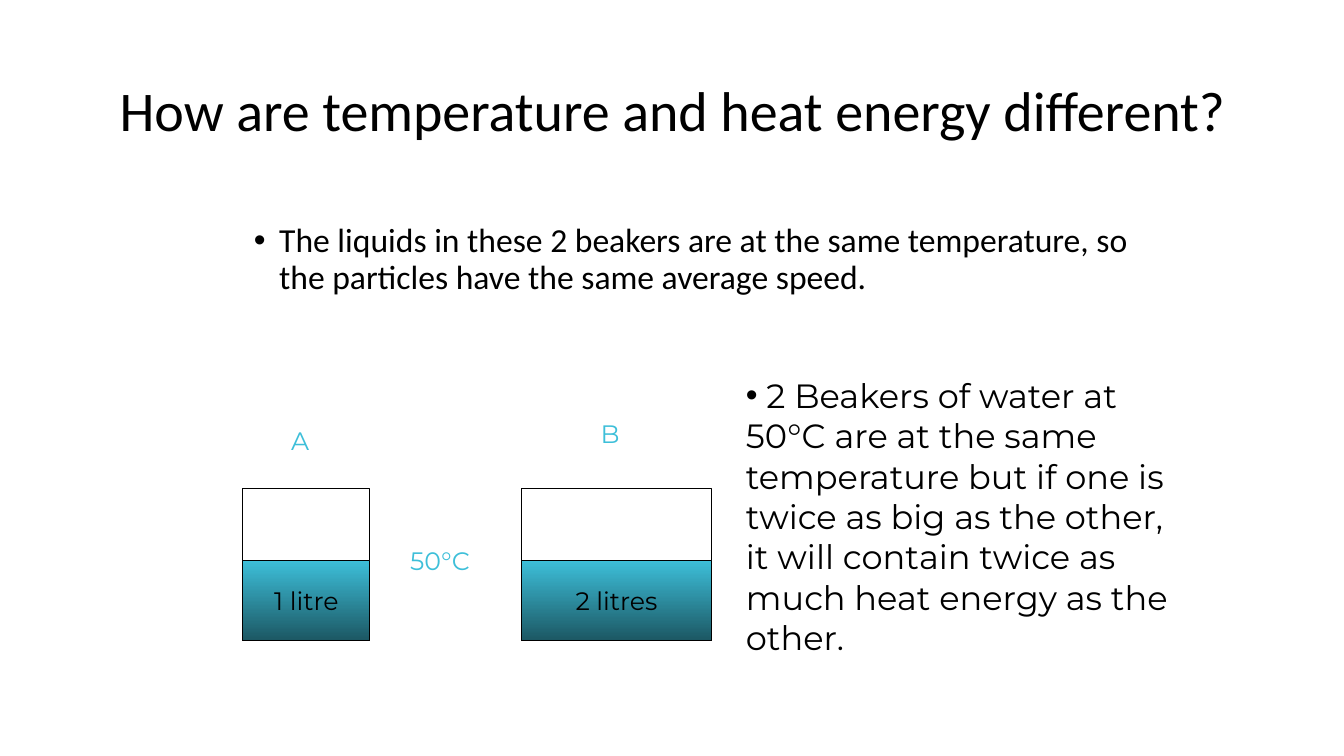
from lxml.etree import SubElement
from pptx import Presentation
from pptx.dml.color import RGBColor
from pptx.enum.shapes import MSO_SHAPE
from pptx.enum.text import MSO_ANCHOR, PP_ALIGN
from pptx.oxml.ns import qn
from pptx.util import Pt

PX = 9144
BLACK, AQUA, TEAL = "000000", "3DBFD9", "1C5864"
HEAD, BODY = "Calibri", "Montserrat"


def px(*sizes):
    """Turn px lengths into EMU."""
    return [size * PX for size in sizes]


def color(code):
    """Return the colour of a hex string."""
    return RGBColor.from_string(code)


def write(shape, text, font, size, ink=BLACK, align=PP_ALIGN.LEFT, wrap=True, middle=False):
    """Fill a shape with one paragraph and return it."""
    frame = shape.text_frame
    frame.word_wrap = wrap
    frame.vertical_anchor = MSO_ANCHOR.MIDDLE if middle else MSO_ANCHOR.TOP
    para = frame.paragraphs[0]
    para.alignment = align
    run = para.add_run()
    run.text = text
    run.font.name = font
    run.font.size = Pt(size)
    run.font.color.rgb = color(ink)
    return para


def bullet(para, hang=0):
    """Give a paragraph a round bullet and a hanging indent in px."""
    props = para._p.get_or_add_pPr()
    props.set("marL", str(hang * PX))
    props.set("indent", str(-hang * PX))
    SubElement(props, qn("a:buFont"), typeface="Arial")
    SubElement(props, qn("a:buChar"), char="•")


def label(slide, box, text):
    """Place a short aqua label."""
    write(slide.shapes.add_textbox(*px(*box)), text, BODY, 18, AQUA, wrap=False)


def block(slide, box):
    """Place an unfilled box with a thin black outline."""
    shape = slide.shapes.add_shape(MSO_SHAPE.RECTANGLE, *px(*box))
    shape.shadow.inherit = False
    shape.fill.background()
    shape.line.color.rgb = color(BLACK)
    shape.line.width = Pt(0.75)
    return shape


def beaker(slide, box, name, rise, volume):
    """Draw a beaker with its water, volume and name above."""
    left, top, width, height = box
    depth = 79
    block(slide, box)
    water = block(slide, (left, top + height - depth, width, depth))
    water.fill.gradient()
    water.fill.gradient_angle = 270
    for stop, code, place in zip(water.fill.gradient_stops, (AQUA, TEAL), (0, 1)):
        stop.color.rgb = color(code)
        stop.position = place
    write(water, volume, BODY, 18, align=PP_ALIGN.CENTER, wrap=False, middle=True)
    label(slide, (left + width // 2 - 25, top - rise, 40, 40), name)


def title(slide, box):
    """Place the centred title."""
    para = write(slide.shapes.add_textbox(*px(*box)),
                 "How are temperature and heat energy different?",
                 HEAD, 40, align=PP_ALIGN.CENTER, middle=True)
    para.line_spacing = 0.9


def intro(slide, box):
    """Place the opening bullet."""
    para = write(slide.shapes.add_textbox(*px(*box)),
                 "The liquids in these 2 beakers are at the same temperature, "
                 "so the particles have the same average speed.", HEAD, 24)
    para.line_spacing = 0.9
    para.space_before = Pt(10)
    bullet(para, 25)


def lesson(slide, box):
    """Place the closing bullet beside the beakers."""
    para = write(slide.shapes.add_textbox(*px(*box)),
                 " 2 Beakers of water at 50°C are at the same temperature but if one is "
                 "twice as big as the other, it will contain twice as much heat energy "
                 "as the other.", BODY, 24)
    bullet(para)


def diagram(slide, box):
    """Draw both beakers and their shared temperature."""
    left, top, width, height = box
    small, large = 126, 189
    beaker(slide, (left, top, small, height), "A", 68, "1 litre")
    beaker(slide, (left + width - large, top, large, height), "B", 75, "2 litres")
    label(slide, (left + small + 30, top + 51, 83, 40), "50°C")


def main():
    """Build and save the slide."""
    deck = Presentation()
    deck.slide_width, deck.slide_height = px(1333, 750)
    slide = deck.slides.add_slide(deck.slide_layouts[6])
    title(slide, (92, 40, 1150, 145))
    intro(slide, (242, 217, 925, 135))
    diagram(slide, (241, 485, 465, 150))
    lesson(slide, (730, 367, 441, 333))
    deck.save("out.pptx")


if __name__ == "__main__":
    main()
